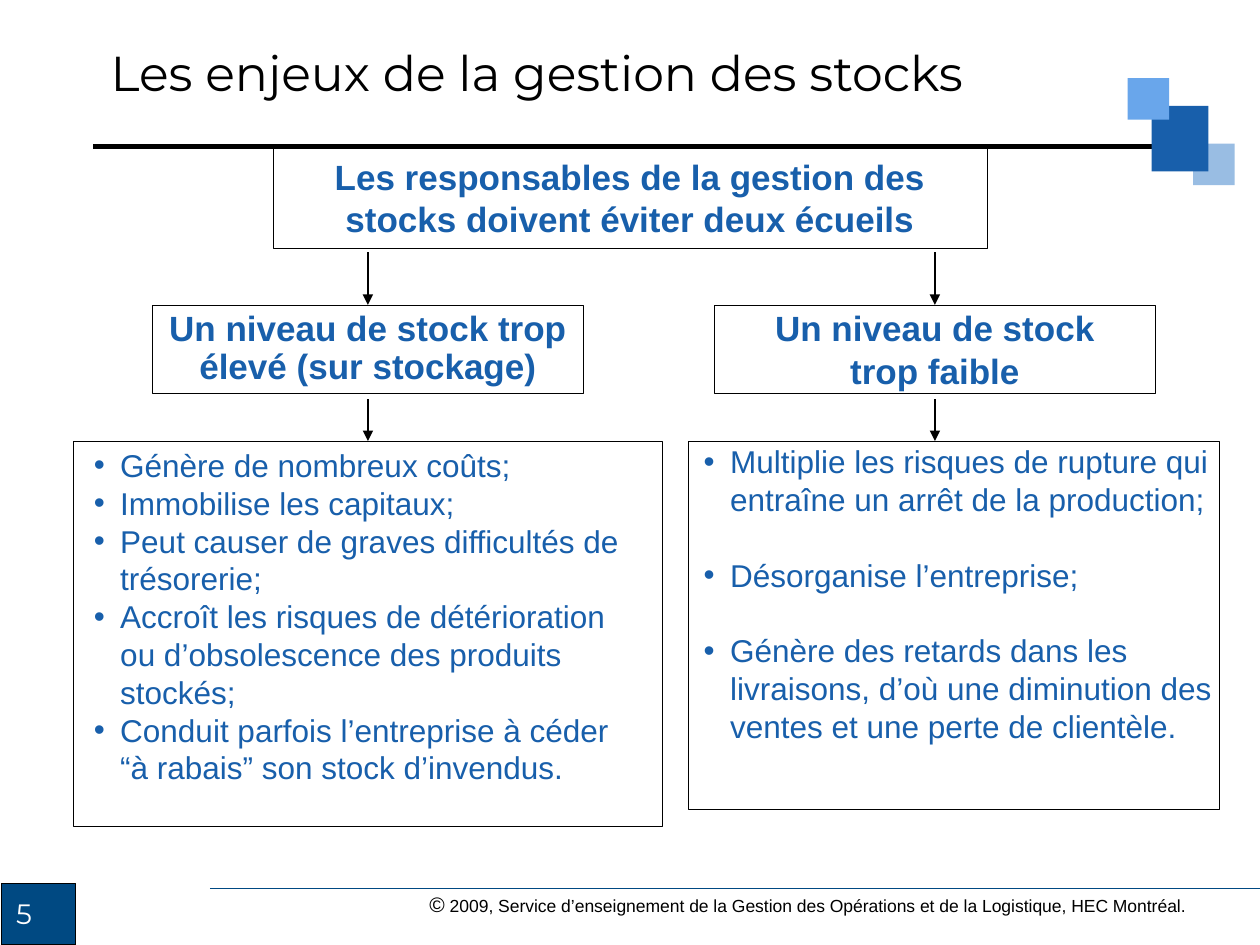
from dataclasses import dataclass
from lxml.etree import SubElement
from pptx import Presentation
from pptx.dml.color import RGBColor
from pptx.enum.shapes import MSO_CONNECTOR as Connector, MSO_SHAPE as Shape
from pptx.enum.text import MSO_ANCHOR as Anchor, PP_ALIGN as Align
from pptx.oxml.ns import qn
from pptx.util import Inches, Pt


@dataclass(frozen=True)
class Theme:
    ink: str = "000000"
    paper: str = "FFFFFF"
    blue: str = "185FAB"
    navy: str = "004982"
    pale: str = "99BDE3"
    sky: str = "69A6EB"
    body_font: str = "Arial"
    title_font: str = "Montserrat"
    title: int = 28
    heading: int = 20
    body: int = 18
    page: int = 16
    symbol: int = 12
    credit: int = 10


THEME = Theme()
WIDTH, HEIGHT = 10, 7.5
TITLE = "Les enjeux de la gestion des stocks"
PAGE = "5"
CREDIT = ("©", " 2009, Service d’enseignement de la Gestion des Opérations et de la Logistique, HEC Montréal.")
WARNING = "Les responsables de la gestion des\nstocks doivent éviter deux écueils"
PITFALLS = [
    {
        "center": 2.92, "heading": "Un niveau de stock trop élevé (sur stockage)",
        "heading_width": 3.42, "line_spacing": 0.9,
        "effects": [
            "Génère de nombreux coûts;",
            "Immobilise les capitaux;",
            "Peut causer de graves difficultés de trésorerie;",
            "Accroît les risques de détérioration ou d’obsolescence des produits stockés;",
            "Conduit parfois l’entreprise à céder “à rabais” son stock d’invendus.",
        ],
        "effects_width": 4.67, "effects_height": 3.06, "fill": THEME.paper,
        "insets": (0.16, 0.04, 0.16, 0.16), "indent": 0.21, "gap": 0,
    },
    {
        "center": 7.42, "heading": "Un niveau de stock\ntrop faible",
        "heading_width": 3.5, "line_spacing": None,
        "effects": [
            "Multiplie les risques de rupture qui entraîne un arrêt de la production;",
            "Désorganise l’entreprise;",
            "Génère des retards dans les livraisons, d’où une diminution des ventes et une perte de clientèle.",
        ],
        "effects_width": 4.21, "effects_height": 2.92, "fill": None,
        "insets": (0.01,) * 4, "indent": 0.32, "gap": 21.6,
    },
]
ORNAMENT = [
    (9.47, 1.14, 0.33, 0.33, THEME.pale),
    (9.14, 0.84, 0.45, 0.52, THEME.blue),
    (8.95, 0.62, 0.33, 0.33, THEME.sky),
]
WARNING_TOP, HEADING_TOP, EFFECTS_TOP = 1.17, 2.42, 3.5
WARNING_WIDTH, WARNING_HEIGHT, HEADING_HEIGHT = 5.67, 0.8, 0.7
ARROWS = [(2, HEADING_TOP), (3.17, EFFECTS_TOP)]
BULLET_HANG = 0.21
TIGHT = (0.01,) * 4

deck = Presentation()
deck.slide_width, deck.slide_height = Inches(WIDTH), Inches(HEIGHT)
slide = deck.slides.add_slide(deck.slide_layouts[6])


def color(value):
    return RGBColor.from_string(value)


def style(font, size, tint, face=THEME.body_font, bold=False):
    font.size, font.name, font.bold = Pt(size), face, bold
    font.color.rgb = color(tint)


def box(left, top, width, height, fill=None, border=None):
    panel = slide.shapes.add_shape(Shape.RECTANGLE, *map(Inches, (left, top, width, height)))
    panel.shadow.inherit = False
    if fill:
        panel.fill.solid()
        panel.fill.fore_color.rgb = color(fill)
    else:
        panel.fill.background()
    if border:
        panel.line.color.rgb = color(THEME.ink)
        panel.line.width = Pt(border)
    else:
        panel.line.fill.background()
    return panel


def label(left, top, width, height, text):
    frame = slide.shapes.add_textbox(*map(Inches, (left, top, width, height))).text_frame
    frame.word_wrap = True
    frame.text = text
    return frame


def rule(start, end, weight, tint=THEME.ink, arrow=False):
    connector = slide.shapes.add_connector(Connector.STRAIGHT, *map(Inches, (*start, *end)))
    connector.line.color.rgb = color(tint)
    connector.line.width = Pt(weight)
    if arrow:
        SubElement(connector.line._get_or_add_ln(), qn("a:tailEnd"), type="triangle")
    SubElement(connector._element.spPr, qn("a:effectLst"))


def fill_text(panel, text, insets, anchor):
    frame = panel.text_frame
    frame.word_wrap = True
    frame.vertical_anchor = anchor
    frame.margin_left, frame.margin_top, frame.margin_right, frame.margin_bottom = map(Inches, insets)
    frame.text = text
    return frame.paragraphs


def heading(center, top, width, height, text, line_spacing=None):
    panel = box(center - width / 2, top, width, height, border=0.25)
    for paragraph in fill_text(panel, text, TIGHT, Anchor.MIDDLE):
        paragraph.alignment = Align.CENTER
        paragraph.line_spacing = line_spacing
        style(paragraph.font, THEME.heading, THEME.blue, bold=True)


def effects(pitfall):
    width = pitfall["effects_width"]
    panel = box(pitfall["center"] - width / 2 + pitfall.get("shift", 0), EFFECTS_TOP, width,
                pitfall["effects_height"], pitfall["fill"], 0.25)
    lines = fill_text(panel, "\n".join(pitfall["effects"]), pitfall["insets"], Anchor.TOP)
    for index, paragraph in enumerate(lines):
        paragraph.alignment = Align.LEFT
        paragraph.space_before = Pt(pitfall["gap"] if index else 0)
        properties = paragraph._p.get_or_add_pPr()
        properties.set("marL", str(Inches(pitfall["indent"])))
        properties.set("indent", str(-Inches(BULLET_HANG)))
        SubElement(properties, qn("a:buFont"), typeface=THEME.body_font)
        SubElement(properties, qn("a:buChar"), char="•")
        style(paragraph.font, THEME.body, THEME.blue)


PITFALLS[1]["shift"] = 0.15

box(0.01, 7.01, 0.59, 0.49, THEME.navy, 0.75)
page = label(0.03, 7.07, 0.5, 0.43, PAGE)
style(page.paragraphs[0].font, THEME.page, THEME.paper, THEME.title_font)

rule((WIDTH / 6, 7.05), (WIDTH, 7.05), 0.75, THEME.navy)
symbol, notice = CREDIT
credit = label(3.31, 7.03, 6.42, 0.3, symbol).paragraphs[0]
credit.add_run().text = notice
for run, size in zip(credit.runs, (THEME.symbol, THEME.credit)):
    style(run.font, size, THEME.ink)

rule((0.74, 1.16), (9.41, 1.16), 2.75)
for left, top, width, height, tint in ORNAMENT:
    box(left, top, width, height, tint)

title = label(0.78, 0, 8.51, 1.14, TITLE)
title.vertical_anchor = Anchor.MIDDLE
style(title.paragraphs[0].font, THEME.title, THEME.ink, THEME.title_font)

heading(WIDTH / 2, WARNING_TOP, WARNING_WIDTH, WARNING_HEIGHT, WARNING)
for pitfall in PITFALLS:
    effects(pitfall)
    heading(pitfall["center"], HEADING_TOP, pitfall["heading_width"], HEADING_HEIGHT,
            pitfall["heading"], pitfall["line_spacing"])
    for start, end in ARROWS:
        rule((pitfall["center"], start), (pitfall["center"], end), 1, arrow=True)

deck.save("out.pptx")
